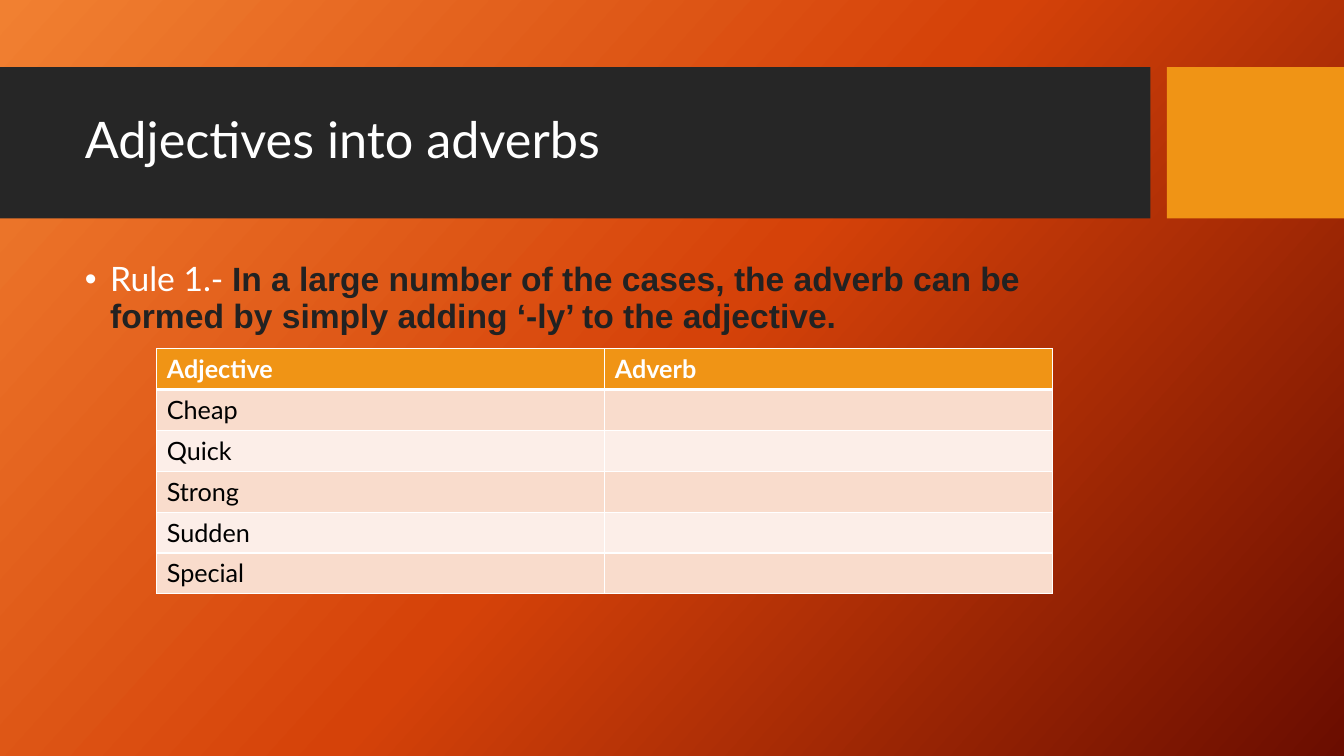
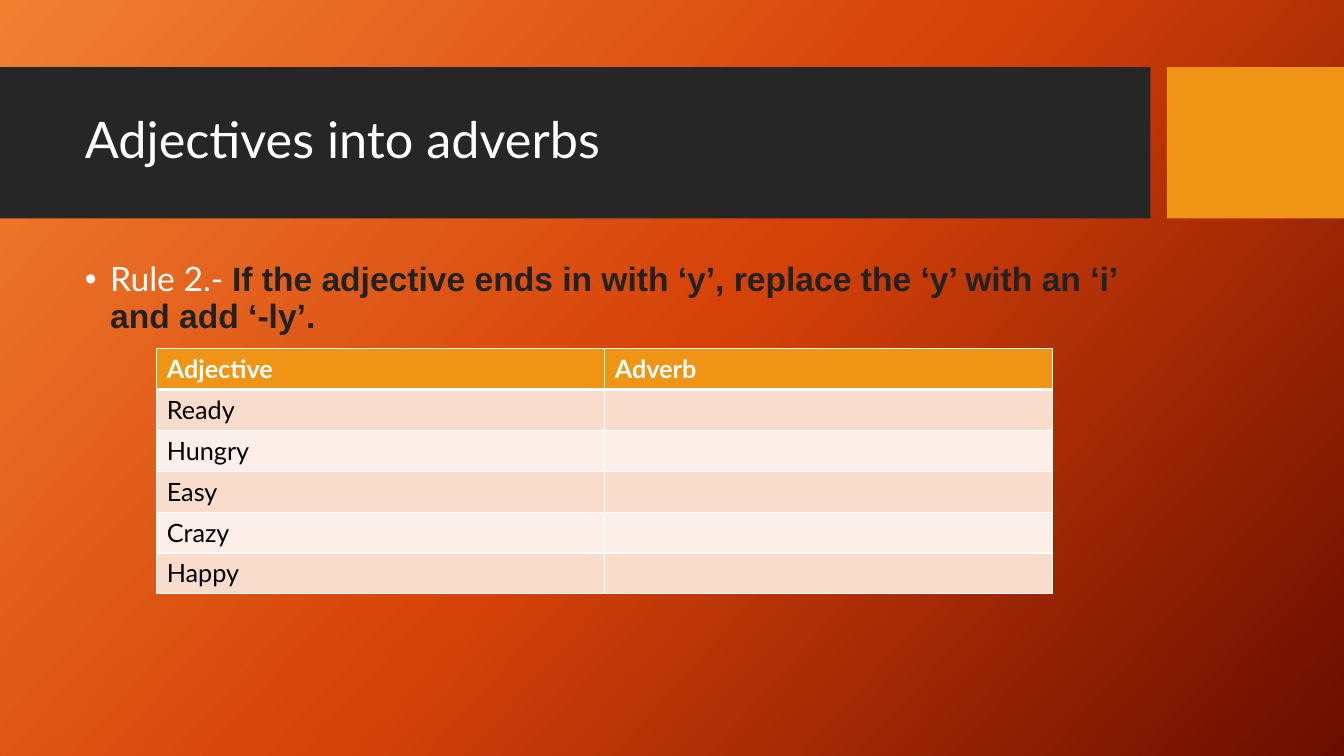
"""Build two slides on turning adjectives into adverbs."""
from pptx import Presentation
from pptx.dml.color import RGBColor as RGB
from pptx.enum.shapes import MSO_SHAPE as Kind
from pptx.enum.text import MSO_ANCHOR as Anchor, MSO_AUTO_SIZE as Auto, PP_ALIGN as Align
from pptx.oxml import parse_xml
from pptx.oxml.ns import nsdecls
from pptx.util import Pt

WHITE = RGB(0xFF, 0xFF, 0xFF)
BLACK = RGB(0, 0, 0)
DARK = RGB(0x26, 0x26, 0x26)
INK = RGB(0x22, 0x22, 0x22)
GOLD = RGB(0xF0, 0x94, 0x15)
TINTS = RGB(0xF9, 0xDC, 0xCC), RGB(0xFC, 0xEE, 0xE8)
GLOW = (0, RGB(0xF1, 0x80, 0x31)), (50, RGB(0xD5, 0x42, 0x09)), (100, RGB(0x6A, 0x0D, 0))
ANGLE = 42

WIDE, HIGH = 960, 540
BANDS = (0, 821.7, DARK), (833.5, 126.5, GOLD)
BAND_TOP, BAND_HIGH = 48, 108
TITLE_BOX = 53.5, 59.2, 757, 85
BODY_BOX = 53.5, 184.2, 757, 283.5
GRID_LEFT, GRID_TOP, GRID_WIDE, ROW_HIGH = 112, 249, 640, 29.2

TITLE = "Adjectives into adverbs"
HEADS = "Adjective", "Adverb"
RULES = [
    ("Rule 1.- ",
     "In a large number of the cases, the adverb can be formed by simply adding ‘-ly’ to the adjective.",
     ["Cheap", "Quick", "Strong", "Sudden", "Special"]),
    ("Rule 2.- ",
     "If the adjective ends in with ‘y’, replace the ‘y’ with an ‘i’ and add ‘-ly’.",
     ["Ready", "Hungry", "Easy", "Crazy", "Happy"]),
]


def place(shape, box):
    shape.left, shape.top, shape.width, shape.height = map(Pt, box)


def write(para, text, size, color, face="Lato", bold=False):
    run = para.add_run()
    run.text = text
    font = run.font
    font.name, font.size, font.bold = face, Pt(size), bold
    font.color.rgb = color


def add_back(layout):
    stops = "".join(f'<a:gs pos="{pos * 1000}"><a:srgbClr val="{color}"/></a:gs>'
                    for pos, color in GLOW)
    back = parse_xml(
        f'<p:bg {nsdecls("p", "a")}><p:bgPr><a:gradFill rotWithShape="1">'
        f'<a:gsLst>{stops}</a:gsLst><a:lin ang="{ANGLE * 60000}" scaled="0"/>'
        '</a:gradFill><a:effectLst/></p:bgPr></p:bg>')
    layout.element.cSld.insert(0, back)


def add_bands(layout, slide):
    for spot, (left, width, color) in enumerate(BANDS, 2):
        band = slide.shapes.add_shape(
            Kind.RECTANGLE, Pt(left), Pt(BAND_TOP), Pt(width), Pt(BAND_HIGH))
        band.shadow.inherit = False
        band.fill.solid()
        band.fill.fore_color.rgb = color
        band.line.fill.background()
        layout.shapes.element.insert(spot, band.element)


def set_layout(layout):
    add_back(layout)
    title, body = layout.placeholders[0], layout.placeholders[1]
    for holder, box, anchor in ((title, TITLE_BOX, Anchor.MIDDLE), (body, BODY_BOX, Anchor.TOP)):
        place(holder, box)
        holder.text_frame.vertical_anchor = anchor
        holder.text_frame.auto_size = Auto.NONE


def start(holder):
    para = holder.text_frame.paragraphs[0]
    para.alignment = Align.LEFT
    para.line_spacing = 0.9
    para.space_before = Pt(0)
    return para


def add_rule(slide, label, rule):
    para = start(slide.placeholders[1])
    props = para._p.get_or_add_pPr()
    props.set("marL", str(Pt(18)))
    props.set("indent", str(-Pt(18)))
    props.append(parse_xml(f'<a:buFont {nsdecls("a")} typeface="Arial"/>'))
    props.append(parse_xml(f'<a:buChar {nsdecls("a")} char="•"/>'))
    write(para, label, 24, WHITE)
    write(para, rule, 24, INK, "Arial", True)


def style(cell, color, top, low):
    cell.fill.solid()
    cell.fill.fore_color.rgb = color
    props = cell._tc.get_or_add_tcPr()
    for spot, (side, width) in enumerate(zip("LRTB", (1, 1, top, low))):
        props.insert(spot, parse_xml(
            f'<a:ln{side} {nsdecls("a")} w="{Pt(width)}"><a:solidFill>'
            f'<a:srgbClr val="{WHITE}"/></a:solidFill></a:ln{side}>'))


def add_grid(slide, words):
    rows = [HEADS] + [(word, "") for word in words]
    grid = slide.shapes.add_table(
        len(rows), len(HEADS), Pt(GRID_LEFT), Pt(GRID_TOP),
        Pt(GRID_WIDE), Pt(ROW_HIGH * len(rows))).table
    for r, row in enumerate(rows):
        head = r == 0
        fill = GOLD if head else TINTS[(r - 1) % 2]
        for c, text in enumerate(row):
            cell = grid.cell(r, c)
            style(cell, fill, 3 if r == 1 else 1, 3 if head else 1)
            if text:
                write(cell.text_frame.paragraphs[0], text, 18,
                      WHITE if head else BLACK, bold=head)


def main():
    deck = Presentation()
    deck.slide_width, deck.slide_height = Pt(WIDE), Pt(HIGH)
    layout = deck.slide_layouts[1]
    set_layout(layout)
    for label, rule, words in RULES:
        slide = deck.slides.add_slide(layout)
        write(start(slide.shapes.title), TITLE, 36, WHITE)
        add_rule(slide, label, rule)
        add_grid(slide, words)
    add_bands(layout, slide)
    deck.save("out.pptx")


if __name__ == "__main__":
    main()
